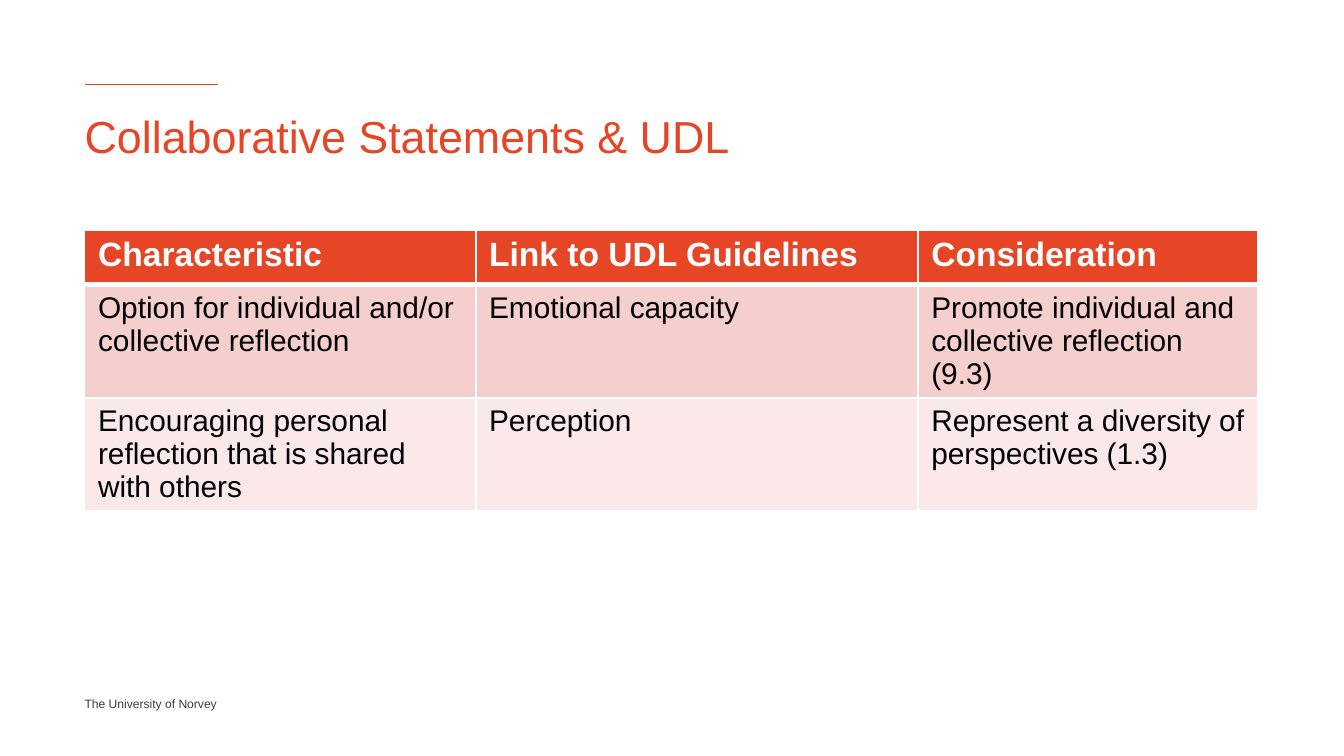
from dataclasses import dataclass

from lxml import etree
from pptx import Presentation
from pptx.dml.color import RGBColor
from pptx.enum import shapes, text
from pptx.oxml import ns
from pptx.util import Inches, Pt

FONT = "Arial"
RED, WHITE, BLACK, GREY = "E64626", "FFFFFF", "000000", "3C3C3B"
LEFT = 0.63


@dataclass
class Row:
    cells: tuple[str, str, str]
    fill: str
    high: float
    size: float = 16
    color: str = BLACK
    bold: bool = False
    rule: float = 1


@dataclass
class Label:
    words: str
    top: float
    wide: float
    high: float
    size: float
    color: str


ROWS = [
    Row(("Characteristic", "Link to UDL Guidelines", "Consideration"),
        RED, 0.41, size=18, color=WHITE, bold=True, rule=3),
    Row(("Option for individual and/or collective reflection",
         "Emotional capacity",
         "Promote individual and collective reflection (9.3)"), "F5CFCD", 0.84),
    Row(("Encouraging personal reflection that is shared with others",
         "Perception",
         "Represent a diversity of perspectives (1.3)"), "FAE9E8", 0.84),
]
WIDTHS = [2.91, 3.29, 2.53]
LABELS = [
    Label("Collaborative Statements & UDL", 0.81, 8.74, 0.4, 24, RED),
    Label("The University of Norvey", 5.18, 1.03, 0.13, 6.5, GREY),
]


def rgb(code: str) -> RGBColor:
    return RGBColor.from_string(code)


def write(frame, words: str, *, size: float, color: str, bold: bool = False) -> None:
    run = frame.paragraphs[0].add_run()
    run.text = words
    font = run.font
    font.name, font.size, font.bold = FONT, Pt(size), bold
    font.color.rgb = rgb(color)


def add_label(slide, item: Label) -> None:
    box = slide.shapes.add_textbox(Inches(LEFT), Inches(item.top),
                                   Inches(item.wide), Inches(item.high))
    frame = box.text_frame
    frame.word_wrap = True
    frame.auto_size = text.MSO_AUTO_SIZE.NONE
    frame.margin_left = frame.margin_right = 0
    frame.margin_top = frame.margin_bottom = 0
    write(frame, item.words, size=item.size, color=item.color)


def add_edges(cell, base: float, top: float) -> None:
    # Border elements must come before the fill, in this order
    props = cell._tc.get_or_add_tcPr()
    sides = {"lnL": 1, "lnR": 1, "lnT": top, "lnB": base}
    for spot, (tag, width) in enumerate(sides.items()):
        line = etree.Element(ns.qn(f"a:{tag}"), w=str(int(Pt(width))))
        fill = etree.SubElement(line, ns.qn("a:solidFill"))
        etree.SubElement(fill, ns.qn("a:srgbClr"), val=WHITE)
        props.insert(spot, line)


def add_grid(slide, rows: list[Row]) -> None:
    high = sum(row.high for row in rows)
    grid = slide.shapes.add_table(len(rows), len(WIDTHS), Inches(LEFT), Inches(1.71),
                                  Inches(sum(WIDTHS)), Inches(high)).table
    for col, width in zip(grid.columns, WIDTHS):
        col.width = Inches(width)
    top = 1
    for r, row in enumerate(rows):
        grid.rows[r].height = Inches(row.high)
        for c, words in enumerate(row.cells):
            cell = grid.cell(r, c)
            cell.fill.solid()
            cell.fill.fore_color.rgb = rgb(row.fill)
            write(cell.text_frame, words, size=row.size, color=row.color, bold=row.bold)
            add_edges(cell, row.rule, top)
        top = row.rule


def add_rule(slide) -> None:
    y = Inches(0.63)
    rule = slide.shapes.add_connector(shapes.MSO_CONNECTOR.STRAIGHT,
                                      Inches(LEFT), y, Inches(1.62), y)
    rule.line.color.rgb = rgb(RED)
    rule.line.width = Pt(0.75)
    etree.SubElement(rule._element.spPr, ns.qn("a:effectLst"))


def main() -> None:
    deck = Presentation()
    # Widescreen, 16 to 9
    deck.slide_width = Inches(10)
    deck.slide_height = Inches(10 * 9 / 16)
    slide = deck.slides.add_slide(deck.slide_layouts[6])

    # Accent line, title and footer
    add_rule(slide)
    for item in LABELS:
        add_label(slide, item)

    # Guidelines table
    add_grid(slide, ROWS)
    deck.save("out.pptx")


if __name__ == "__main__":
    main()
